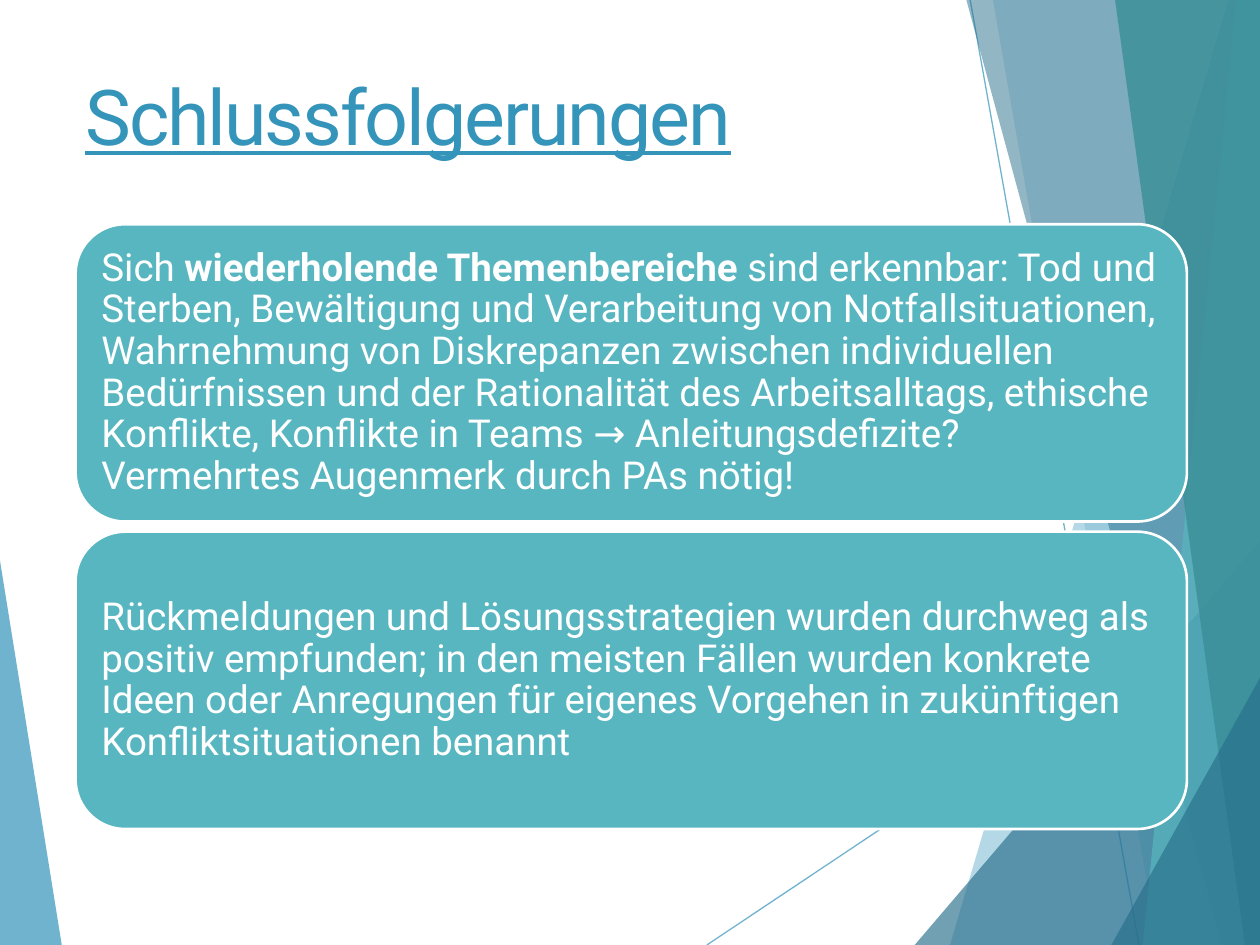
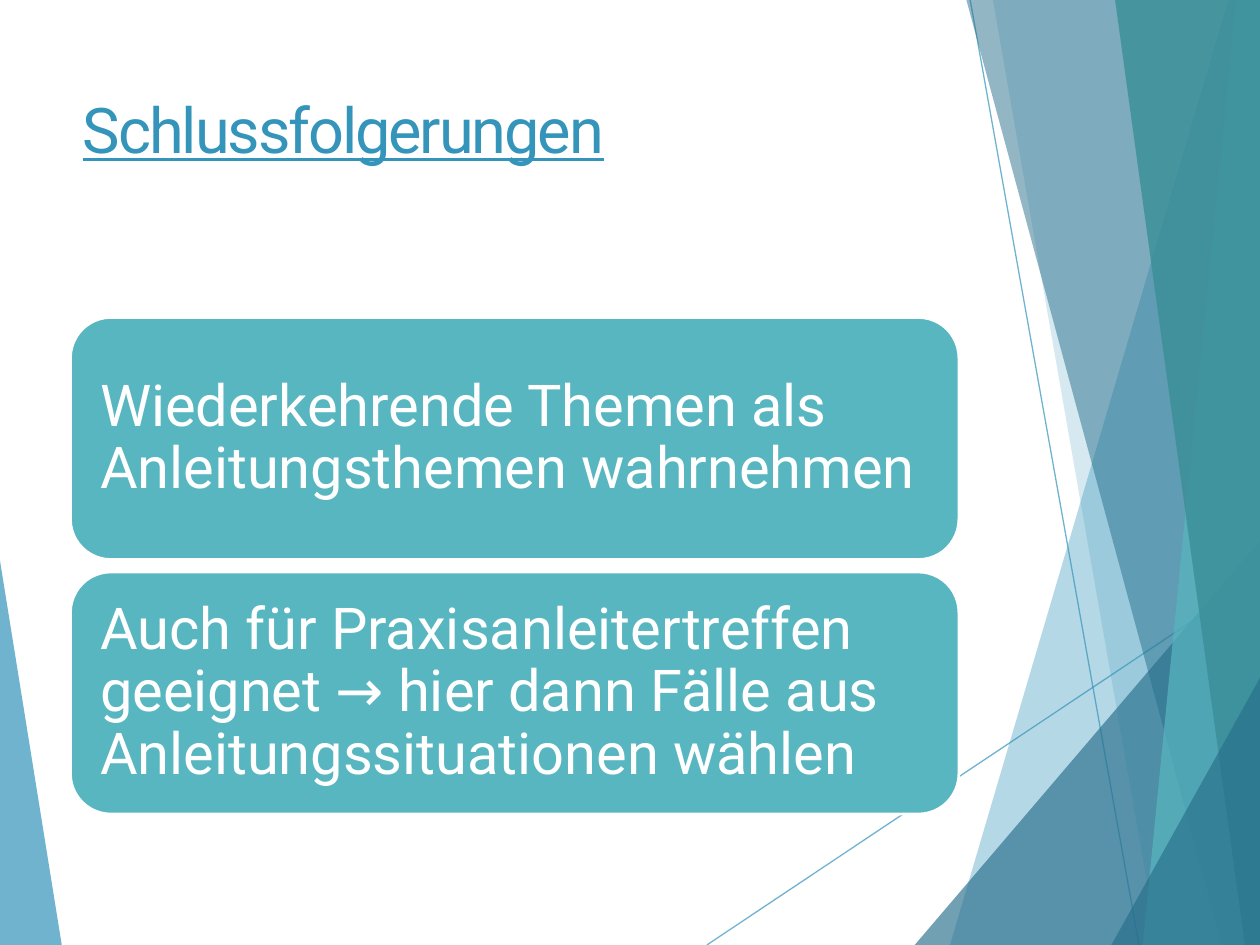
from pptx import Presentation
from pptx.dml.color import RGBColor
from pptx.enum.shapes import MSO_CONNECTOR, MSO_SHAPE
from pptx.enum.text import MSO_ANCHOR, PP_ALIGN
from pptx.oxml.ns import qn
from pptx.util import Inches, Pt
from lxml.etree import SubElement

# Colours and font
BLUE = RGBColor(0x34, 0x94, 0xBA)
NAVY = RGBColor(0x27, 0x6F, 0x8B)
TEAL = RGBColor(0x58, 0xB6, 0xC0)
PINE = RGBColor(0x3A, 0x8F, 0x98)
WHITE = RGBColor(0xFF, 0xFF, 0xFF)
FONT = "Roboto"

# Slide size in inches
W, H = 10, 7.5

# Content: each card is a list of (text, bold) parts
SLIDES = [
    {
        "title": "Schlussfolgerungen",
        "box": (0.58, 0.06, 8.84, 1.81), "size": 44,
        "anchor": MSO_ANCHOR.MIDDLE, "lead": 0.85,
        "grid": {"left": 0.6, "top": 1.78, "wide": 8.82, "high": 2.36, "gap": 0.08},
        "text": 22, "inset": 0.09,
        "cards": [
            [("Sich ", False),
             ("wiederholende Themenbereiche ", True),
             ("sind erkennbar: Tod und Sterben, Bewältigung und Verarbeitung von "
              "Notfallsituationen, Wahrnehmung von Diskrepanzen zwischen "
              "individuellen Bedürfnissen und der Rationalität des Arbeitsalltags, "
              "ethische Konflikte, Konflikte in Teams → Anleitungsdefizite? "
              "Vermehrtes Augenmerk durch PAs nötig!", False)],
            [("Rückmeldungen und Lösungsstrategien wurden durchweg als positiv "
              "empfunden; in den meisten Fällen wurden konkrete Ideen oder "
              "Anregungen für eigenes Vorgehen in zukünftigen "
              "Konfliktsituationen benannt", False)],
        ],
    },
    {
        "title": "Schlussfolgerungen",
        "box": (0.56, 0.67, 7.05, 1.44), "size": 36,
        "anchor": MSO_ANCHOR.TOP, "lead": 1.0,
        "grid": {"left": 0.56, "top": 2.52, "wide": 7.05, "high": 1.92, "gap": 0.1},
        "text": 33, "inset": 0.14,
        "cards": [
            [("Wiederkehrende Themen als Anleitungsthemen wahrnehmen", False)],
            [("Auch für Praxisanleitertreffen geeignet → hier dann Fälle aus "
              "Anleitungssituationen wählen", False)],
        ],
    },
]

# Backdrop, from back to front: colour, opacity in percent, corners
WEDGE = (BLUE, 70, [(0, 4.45), (0.49, H), (0, H)])
RAYS = [((5.61, H), (W, 4.57)), ((7.7, 0), (9.04, H))]
PANES = [
    (BLUE, 36, [(9.75, 0), (7.54, H), (W, H), (W, 0)]),
    (BLUE, 20, [(7.88, 0), (9.19, H), (W, H), (W, 0)]),
    (NAVY, 66, [(7.26, H), (W, 4.29), (W, H)]),
    (NAVY, 50, [(7.67, 0), (9.7, H), (W, H), (W, 0)]),
    (TEAL, 70, [(9.81, 0), (9.07, H), (W, H), (W, 0)]),
    (PINE, 82, [(8.85, 0), (9.88, H), (W, H), (W, 0)]),
    (NAVY, 66, [(8.82, H), (W, 5.38), (W, H)]),
]


def fade(shape, share):
    """Set the opacity of every colour in a shape's fill and line."""
    for tint in shape._element.spPr.iter(qn("a:srgbClr")):
        SubElement(tint, qn("a:alpha")).set("val", str(share * 1000))


def add_pane(slide, color, share, dots):
    dots = [(Inches(x), Inches(y)) for x, y in dots]
    draft = slide.shapes.build_freeform(*dots[0], scale=1.0)
    draft.add_line_segments(dots[1:], close=True)
    pane = draft.convert_to_shape()
    pane.shadow.inherit = False
    pane.fill.solid()
    pane.fill.fore_color.rgb = color
    pane.line.fill.background()
    fade(pane, share)


def add_ray(slide, start, end):
    ends = [Inches(n) for n in (*start, *end)]
    ray = slide.shapes.add_connector(MSO_CONNECTOR.STRAIGHT, *ends)
    ray.line.color.rgb = BLUE
    ray.line.width = Pt(0.75)
    fade(ray, 70)
    SubElement(ray._element.spPr, qn("a:effectLst"))


def add_back(slide):
    add_pane(slide, *WEDGE)
    for ray in RAYS:
        add_ray(slide, *ray)
    for pane in PANES:
        add_pane(slide, *pane)


def style(run, size, color):
    run.font.name = FONT
    run.font.size = Pt(size)
    run.font.color.rgb = color


def add_title(slide, page):
    box = slide.shapes.add_textbox(*[Inches(n) for n in page["box"]])
    frame = box.text_frame
    frame.word_wrap = True
    frame.vertical_anchor = page["anchor"]
    frame.text = page["title"]
    line = frame.paragraphs[0]
    line.line_spacing = page["lead"]
    run = line.runs[0]
    style(run, page["size"], BLUE)
    run.font.underline = True
    run.font._element.set("spc", "-120")


def add_card(slide, page, row):
    grid = page["grid"]
    top = grid["top"] + row * (grid["high"] + grid["gap"])
    place = (grid["left"], top, grid["wide"], grid["high"])
    card = slide.shapes.add_shape(
        MSO_SHAPE.ROUNDED_RECTANGLE, *[Inches(n) for n in place])
    card.shadow.inherit = False
    card.fill.solid()
    card.fill.fore_color.rgb = TEAL
    card.line.color.rgb = WHITE
    card.line.width = Pt(1.5)

    frame = card.text_frame
    frame.word_wrap = True
    frame.vertical_anchor = MSO_ANCHOR.MIDDLE
    for side in ("left", "top", "right", "bottom"):
        setattr(frame, f"margin_{side}", Inches(page["inset"]))
    para = frame.paragraphs[0]
    para.alignment = PP_ALIGN.LEFT
    para.line_spacing = 0.9
    for text, bold in page["cards"][row]:
        run = para.add_run()
        run.text = text
        run.font.bold = bold
        style(run, page["text"], WHITE)


def main():
    deck = Presentation()
    deck.slide_width, deck.slide_height = Inches(W), Inches(H)
    for page in SLIDES:
        slide = deck.slides.add_slide(deck.slide_layouts[6])
        add_back(slide)
        add_title(slide, page)
        for row in range(len(page["cards"])):
            add_card(slide, page, row)
    deck.save("out.pptx")


if __name__ == "__main__":
    main()
